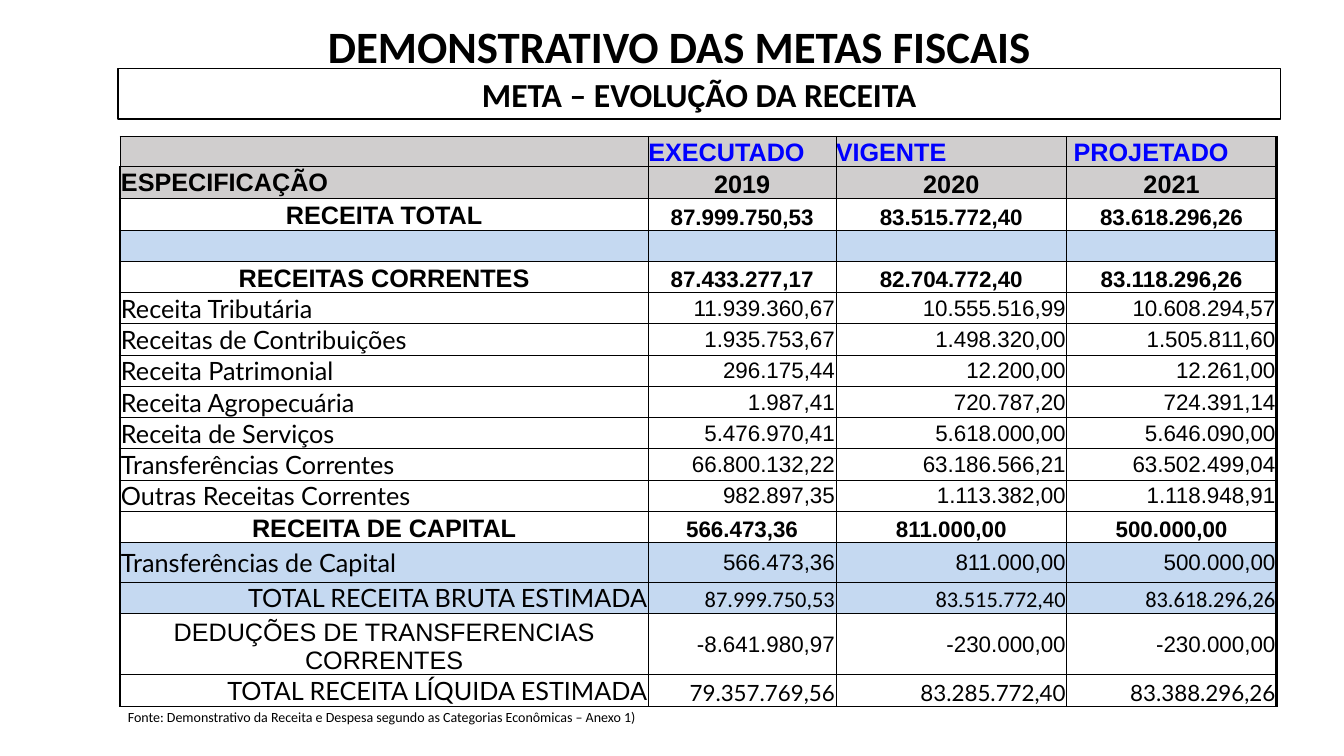
"""Build the fiscal targets slide with its revenue table."""
from lxml.etree import SubElement
from pptx import Presentation
from pptx.dml.color import RGBColor
from pptx.enum.shapes import MSO_SHAPE
from pptx.enum.text import MSO_ANCHOR, PP_ALIGN
from pptx.oxml.ns import qn
from pptx.util import Inches, Pt

TITLE = "DEMONSTRATIVO DAS METAS FISCAIS"
META = "META – EVOLUÇÃO DA RECEITA"
SOURCE = ("Fonte: Demonstrativo da Receita e Despesa segundo as "
          "Categorias Econômicas – Anexo 1)")
ROWS = [
    ("head", "", "EXECUTADO", "VIGENTE", "\u00a0PROJETADO"),
    ("year", "ESPECIFICAÇÃO", "2019", "2020", "2021"),
    ("sum", "RECEITA TOTAL", "87.999.750,53", "83.515.772,40", "83.618.296,26"),
    ("gap", "", "", "", ""),
    ("sum", "RECEITAS CORRENTES", "87.433.277,17", "82.704.772,40", "83.118.296,26"),
    ("item", "Receita Tributária", "11.939.360,67", "10.555.516,99", "10.608.294,57"),
    ("item", "Receitas de Contribuições", "1.935.753,67", "1.498.320,00", "1.505.811,60"),
    ("item", "Receita Patrimonial", "296.175,44", "12.200,00", "12.261,00"),
    ("item", "Receita Agropecuária", "1.987,41", "720.787,20", "724.391,14"),
    ("item", "Receita de Serviços", "5.476.970,41", "5.618.000,00", "5.646.090,00"),
    ("item", "Transferências Correntes", "66.800.132,22", "63.186.566,21", "63.502.499,04"),
    ("item", "Outras Receitas Correntes", "982.897,35", "1.113.382,00", "1.118.948,91"),
    ("sum", "RECEITA DE CAPITAL", "566.473,36", "811.000,00", "500.000,00"),
    ("capital", "Transferências de Capital", "566.473,36", "811.000,00", "500.000,00"),
    ("gross", "TOTAL RECEITA BRUTA ESTIMADA", "87.999.750,53", "83.515.772,40", "83.618.296,26"),
    ("cut", "DEDUÇÕES DE TRANSFERENCIAS CORRENTES", "-8.641.980,97", "-230.000,00", "-230.000,00"),
    ("net", "TOTAL RECEITA LÍQUIDA ESTIMADA", "79.357.769,56", "83.285.772,40", "83.388.296,26"),
]
COLS = [5.24, 1.86, 2.29, 2.08]
HIGH = {"head": 0.3, "year": 0.32, "capital": 0.39, "cut": 0.6}
FILLS = {"head": "D0CECE", "year": "D0CECE", "gap": "C5D9F1",
         "capital": "C5D9F1", "gross": "C5D9F1"}
LEFT, MID, RIGHT = PP_ALIGN.LEFT, PP_ALIGN.CENTER, PP_ALIGN.RIGHT
LOW, HALF = MSO_ANCHOR.BOTTOM, MSO_ANCHOR.MIDDLE
ITEM = (("Lato", 18, False, LEFT, HALF), ("Arial", 16, False, RIGHT, HALF))
STYLES = {
    "head": (("Arial", 18, True, LEFT, LOW),) * 2,
    "year": (("Arial", 18, True, LEFT, HALF), ("Arial", 18, True, MID, LOW)),
    "sum": (("Arial", 18, True, MID, LOW), ("Arial", 16, True, MID, LOW)),
    "gap": ITEM, "item": ITEM, "capital": ITEM,
    "gross": (("Lato", 18, False, RIGHT, LOW), ("Calibri", 16, False, RIGHT, LOW)),
    "cut": (("Arial", 18, False, MID, LOW), ("Arial", 16, False, RIGHT, HALF)),
    "net": (("Lato", 18, False, RIGHT, LOW), ("Lato", 16, False, RIGHT, LOW)),
}


def color(code):
    return RGBColor.from_string(code)


def write(frame, text, face, size, bold, align, ink="000000"):
    para = frame.paragraphs[0]
    para.text = text
    para.alignment = align
    font = para.font
    font.name, font.size, font.bold = face, Pt(size), bold
    font.color.rgb = color(ink)


def edge(cell, side, width):
    line = SubElement(cell._tc.get_or_add_tcPr(), qn(f"a:ln{side}"), w=str(Pt(width)))
    fill = SubElement(line, qn("a:solidFill"))
    SubElement(fill, qn("a:srgbClr"), val="000000")


def note(slide, box, text, size, bold, align, wrap):
    frame = slide.shapes.add_textbox(*map(Inches, box)).text_frame
    frame.word_wrap = wrap
    write(frame, text, "Calibri", size, bold, align)


def banner(slide):
    box = slide.shapes.add_shape(MSO_SHAPE.RECTANGLE, *map(Inches, (1.17, 0.68, 11.53, 0.5)))
    box.shadow.inherit = False
    box.fill.solid()
    box.fill.fore_color.rgb = color("FFFFFF")
    box.line.color.rgb = color("000000")
    box.line.width = Pt(1)
    write(box.text_frame, META, "Calibri", 24, True, MID)


def fill_cell(cell, kind, col, text):
    face, size, bold, align, anchor = STYLES[kind][col > 0]
    inset = 0 if kind == "head" else Inches(0.01)
    cell.margin_left = cell.margin_right = cell.margin_top = inset
    cell.margin_bottom = 0
    cell.vertical_anchor = anchor
    edge(cell, "L", 2 if col == 0 and kind != "head" else 0.5)
    edge(cell, "R", 2 if col == len(COLS) - 1 else 0.5)
    edge(cell, "T", 0.5)
    edge(cell, "B", 0.5)
    if kind in FILLS:
        cell.fill.solid()
        cell.fill.fore_color.rgb = color(FILLS[kind])
    else:
        cell.fill.background()
    if text:
        ink = "0000FF" if kind == "head" else "000000"
        write(cell.text_frame, text, face, size, bold, align, ink)


def revenue(slide):
    highs = [HIGH.get(row[0], 0.31) for row in ROWS]
    table = slide.shapes.add_table(
        len(ROWS), len(COLS), Inches(1.19), Inches(1.35),
        Inches(sum(COLS)), Inches(sum(highs))).table
    table.first_row = table.horz_banding = False
    for col, width in zip(table.columns, COLS):
        col.width = Inches(width)
    for r, (kind, *texts) in enumerate(ROWS):
        table.rows[r].height = Inches(highs[r])
        for c, text in enumerate(texts):
            fill_cell(table.cell(r, c), kind, c, text)


def main():
    deck = Presentation()
    deck.slide_width, deck.slide_height = Inches(13.33), Inches(7.5)
    slide = deck.slides.add_slide(deck.slide_layouts[6])
    banner(slide)
    note(slide, (3.12, 0.14, 7.24, 0.64), TITLE, 32, True, MID, False)
    revenue(slide)
    note(slide, (1.17, 6.98, 11.3, 0.27), SOURCE, 10, False, LEFT, True)
    deck.save("out.pptx")


if __name__ == "__main__":
    main()
